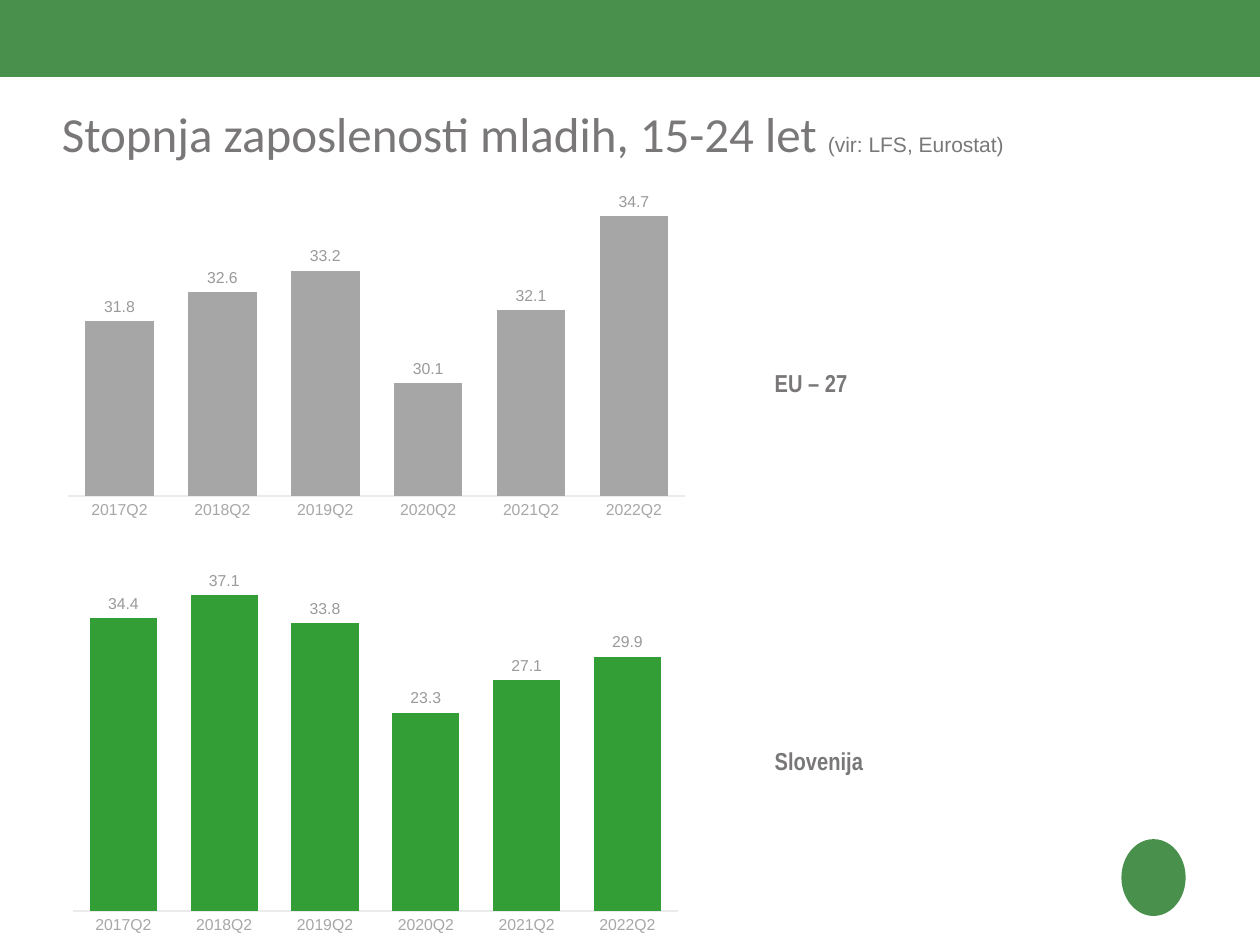
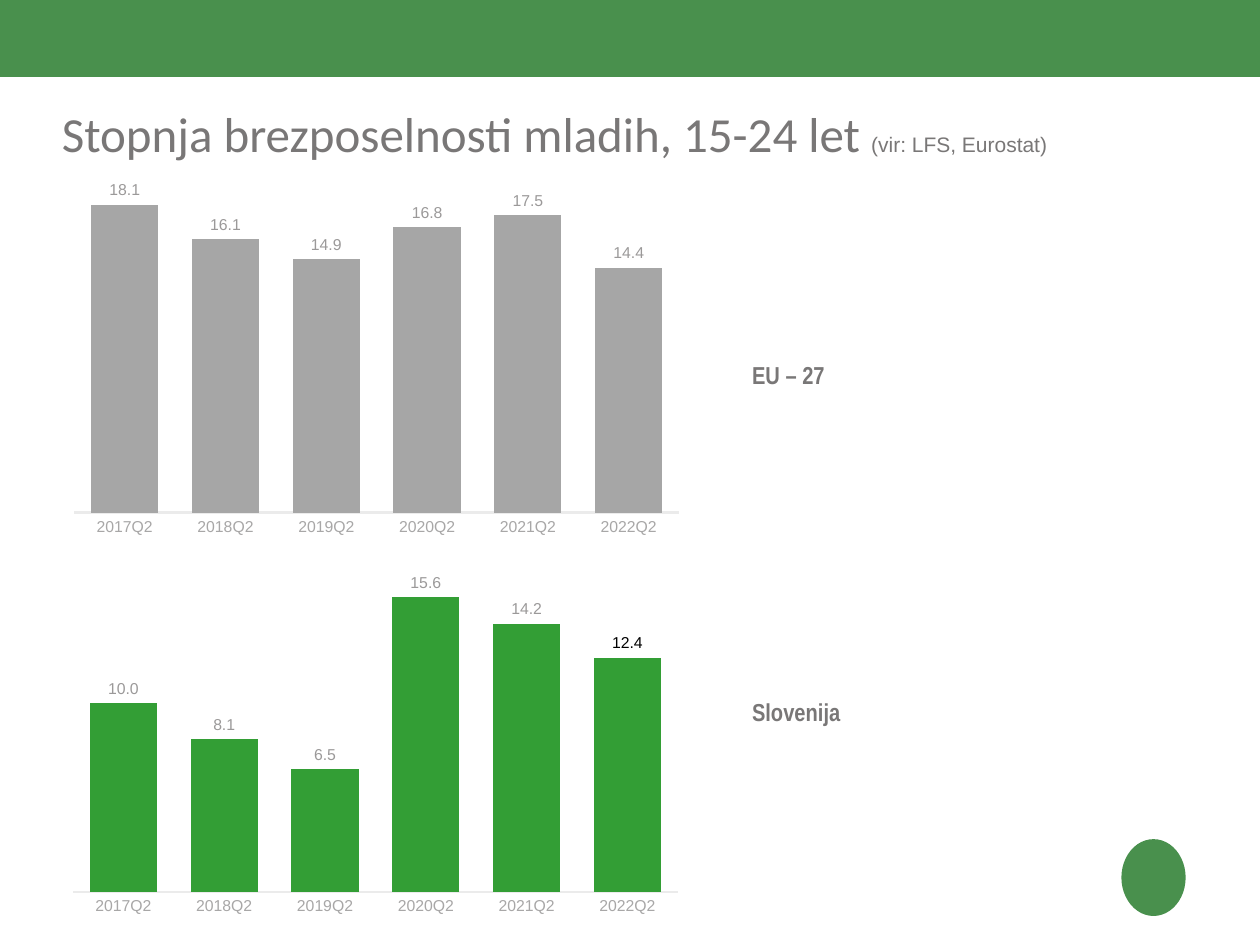
from dataclasses import dataclass
from typing import Any

from lxml import etree
from pptx import Presentation
from pptx.chart.data import CategoryChartData
from pptx.dml.color import RGBColor
from pptx.enum.chart import XL_CHART_TYPE, XL_LABEL_POSITION, XL_TICK_LABEL_POSITION, XL_TICK_MARK
from pptx.enum.shapes import MSO_SHAPE
from pptx.enum.text import MSO_ANCHOR, MSO_AUTO_SIZE, PP_ALIGN
from pptx.oxml import parse_xml
from pptx.oxml.ns import nsdecls, qn
from pptx.util import Emu, Pt

PX = 9144  # EMU per px, 100 px to the inch
TITLE_ONLY = 5

COLUMNS = XL_CHART_TYPE.COLUMN_CLUSTERED
OUTSIDE_END = XL_LABEL_POSITION.OUTSIDE_END
NO_LABELS = XL_TICK_LABEL_POSITION.NONE
NO_TICKS = XL_TICK_MARK.NONE
RECTANGLE = MSO_SHAPE.RECTANGLE
OVAL = MSO_SHAPE.OVAL

BRAND_GREEN = RGBColor(0x49, 0x90, 0x4D)
BAR_GREEN = RGBColor(0x33, 0x9E, 0x35)
BAR_GRAY = RGBColor(0xA6, 0xA6, 0xA6)
TEXT_GRAY = RGBColor(0x79, 0x77, 0x77)
LABEL_GRAY = RGBColor(0x9B, 0x99, 0x99)
AXIS_GRAY = RGBColor(0xA8, 0xA7, 0xA7)
AXIS_LINE = RGBColor(0xEB, 0xEB, 0xEB)
BLACK = RGBColor(0, 0, 0)

TITLE_FONT = {"name": "Calibri", "size": Pt(28), "bold": False}
SOURCE_FONT = {"name": "Arial", "size": Pt(12), "bold": False}
REGION_FONT = {"name": "Arial Narrow", "size": Pt(14), "bold": True}
CHART_FONT = {"name": "Arial", "size": Pt(10)}
SMALL_FONT = {"name": "Arial", "size": Pt(9), "bold": False}
TITLE_FRAME = {
    "margin_left": 0, "margin_top": 0, "margin_right": 0, "margin_bottom": 0,
    "word_wrap": True, "auto_size": MSO_AUTO_SIZE.NONE, "vertical_anchor": MSO_ANCHOR.TOP,
}
REGION_FRAME = {"word_wrap": True, "auto_size": MSO_AUTO_SIZE.SHAPE_TO_FIT_TEXT}
NUMBER_FORMAT = {"number_format": "0.0", "number_format_is_linked": False}
LABEL_FORMAT = {**NUMBER_FORMAT, "show_value": True, "position": OUTSIDE_END}
CATEGORY_AXIS = {"major_tick_mark": NO_TICKS, "minor_tick_mark": NO_TICKS,
                 "has_major_gridlines": False}
VALUE_AXIS = {**CATEGORY_AXIS, "tick_label_position": NO_LABELS}

SOURCE = "(vir: LFS, Eurostat)"
QUARTERS = [f"{year}Q2" for year in range(2017, 2023)]


@dataclass(frozen=True)
class Box:
    left: int
    top: int
    width: int
    height: int

    def emu(self) -> tuple[Emu, ...]:
        return tuple(Emu(px * PX) for px in (self.left, self.top, self.width, self.height))


@dataclass(frozen=True)
class PlotArea:
    x: float
    y: float
    w: float
    h: float


WIDE_PLOT = PlotArea(0.01, 0.01, 0.98, 0.89)
USUAL_PLOT = PlotArea(0.02, 0.02, 0.96, 0.9)


@dataclass(frozen=True)
class RegionChart:
    region: str
    region_box: Box
    chart_box: Box
    rates: tuple[float, ...]
    bar_color: RGBColor
    maximum: int
    minimum: int = 0
    overlap: int = -27
    plot_area: PlotArea = USUAL_PLOT
    black_label: int | None = None


@dataclass(frozen=True)
class RateSlide:
    title: str
    charts: tuple[RegionChart, ...]


SLIDES = (
    RateSlide("Stopnja zaposlenosti mladih, 15-24 let ", (
        RegionChart("EU – 27", Box(605, 287, 169, 69), Box(49, 131, 500, 292),
                    (31.8, 32.6, 33.2, 30.1, 32.1, 34.7), BAR_GRAY,
                    maximum=36, minimum=27, overlap=68, plot_area=WIDE_PLOT),
        RegionChart("Slovenija", Box(605, 587, 169, 34), Box(48, 447, 500, 300),
                    (34.4, 37.1, 33.8, 23.3, 27.1, 29.9), BAR_GREEN, maximum=40),
    )),
    RateSlide("Stopnja brezposelnosti mladih, 15-24 let ", (
        RegionChart("EU – 27", Box(587, 281, 169, 34), Box(49, 131, 500, 300),
                    (18.1, 16.1, 14.9, 16.8, 17.5, 14.4), BAR_GRAY, maximum=20),
        RegionChart("Slovenija", Box(587, 548, 169, 34), Box(48, 432, 500, 300),
                    (10.0, 8.1, 6.5, 15.6, 14.2, 12.4), BAR_GREEN,
                    maximum=18, black_label=5),
    )),
)


def apply(target: Any, values: dict[str, Any]) -> None:
    for name, value in values.items():
        setattr(target, name, value)


def style_font(font: Any, values: dict[str, Any], color: RGBColor) -> None:
    apply(font, values)
    font.color.rgb = color


def add_run(paragraph: Any, text: str, values: dict[str, Any]) -> None:
    run = paragraph.add_run()
    run.text = text
    style_font(run.font, values, TEXT_GRAY)


def add_green_shape(slide: Any, kind: Any, box: Box) -> None:
    shape = slide.shapes.add_shape(kind, *box.emu())
    shape.shadow.inherit = False
    shape.fill.solid()
    shape.fill.fore_color.rgb = BRAND_GREEN
    shape.line.fill.background()


def add_title(slide: Any, text: str) -> None:
    title = slide.shapes.title
    title.left, title.top, title.width, title.height = Box(49, 82, 926, 71).emu()
    apply(title.text_frame, TITLE_FRAME)
    paragraph = title.text_frame.paragraphs[0]
    paragraph.alignment = PP_ALIGN.LEFT
    add_run(paragraph, text, TITLE_FONT)
    add_run(paragraph, SOURCE, SOURCE_FONT)


def add_region_name(slide: Any, spec: RegionChart) -> None:
    text_box = slide.shapes.add_textbox(*spec.region_box.emu())
    apply(text_box.text_frame, REGION_FRAME)
    add_run(text_box.text_frame.paragraphs[0], spec.region, REGION_FONT)


def set_plot_area(chart: Any, area: PlotArea) -> None:
    plot_area = chart.element.find(f".//{qn('c:plotArea')}")
    for layout in plot_area.findall(qn("c:layout")):
        plot_area.remove(layout)
    layout = parse_xml(f"<c:layout {nsdecls('c')}/>")
    manual = etree.SubElement(layout, qn("c:manualLayout"))
    settings = {"layoutTarget": "inner", "xMode": "edge", "yMode": "edge",
                "x": area.x, "y": area.y, "w": area.w, "h": area.h}
    for name, value in settings.items():
        etree.SubElement(manual, qn(f"c:{name}")).set("val", str(value))
    plot_area.insert(0, layout)


def set_white_background(chart: Any) -> None:
    background = parse_xml(
        f"<c:spPr {nsdecls('c', 'a')}><a:solidFill><a:srgbClr val='FFFFFF'/></a:solidFill>"
        "<a:ln><a:noFill/></a:ln></c:spPr>")
    chart.element.find(qn("c:chart")).addnext(background)


def add_rate_chart(slide: Any, spec: RegionChart) -> None:
    chart_data = CategoryChartData(number_format="0.0")
    chart_data.categories = QUARTERS
    chart_data.add_series("Series 1", spec.rates)
    chart = slide.shapes.add_chart(COLUMNS, *spec.chart_box.emu(), chart_data).chart
    apply(chart, {"has_legend": False, "has_title": False})
    style_font(chart.font, CHART_FONT, TEXT_GRAY)
    set_white_background(chart)
    set_plot_area(chart, spec.plot_area)

    # Axes
    category_axis, value_axis = chart.category_axis, chart.value_axis
    apply(category_axis, CATEGORY_AXIS)
    apply(value_axis, {**VALUE_AXIS, "minimum_scale": spec.minimum,
                       "maximum_scale": spec.maximum})
    apply(value_axis.tick_labels, NUMBER_FORMAT)
    for axis in (category_axis, value_axis):
        style_font(axis.tick_labels.font, SMALL_FONT, AXIS_GRAY)
    category_axis.format.line.color.rgb = AXIS_LINE
    category_axis.format.line.width = Pt(1.5)
    value_axis.format.line.fill.background()

    # Bars and their labels
    plot = chart.plots[0]
    apply(plot, {"gap_width": 50, "overlap": spec.overlap, "vary_by_categories": False})
    series = plot.series[0]
    series.format.fill.solid()
    series.format.fill.fore_color.rgb = spec.bar_color
    apply(series.data_labels, LABEL_FORMAT)
    style_font(series.data_labels.font, SMALL_FONT, LABEL_GRAY)
    if spec.black_label is not None:
        label = series.points[spec.black_label].data_label
        style_font(label.font, SMALL_FONT, BLACK)
        label.position = OUTSIDE_END


def add_rate_slide(presentation: Any, spec: RateSlide) -> None:
    slide = presentation.slides.add_slide(presentation.slide_layouts[TITLE_ONLY])
    # Top band and corner emblem
    add_green_shape(slide, RECTANGLE, Box(0, 0, 1000, 61))
    add_green_shape(slide, OVAL, Box(890, 666, 51, 61))
    add_title(slide, spec.title)
    for chart in spec.charts:
        add_region_name(slide, chart)
        add_rate_chart(slide, chart)


def main() -> None:
    presentation = Presentation()
    presentation.slide_width = Emu(1000 * PX)
    presentation.slide_height = Emu(750 * PX)
    for spec in SLIDES:
        add_rate_slide(presentation, spec)
    presentation.save("out.pptx")


if __name__ == "__main__":
    main()
